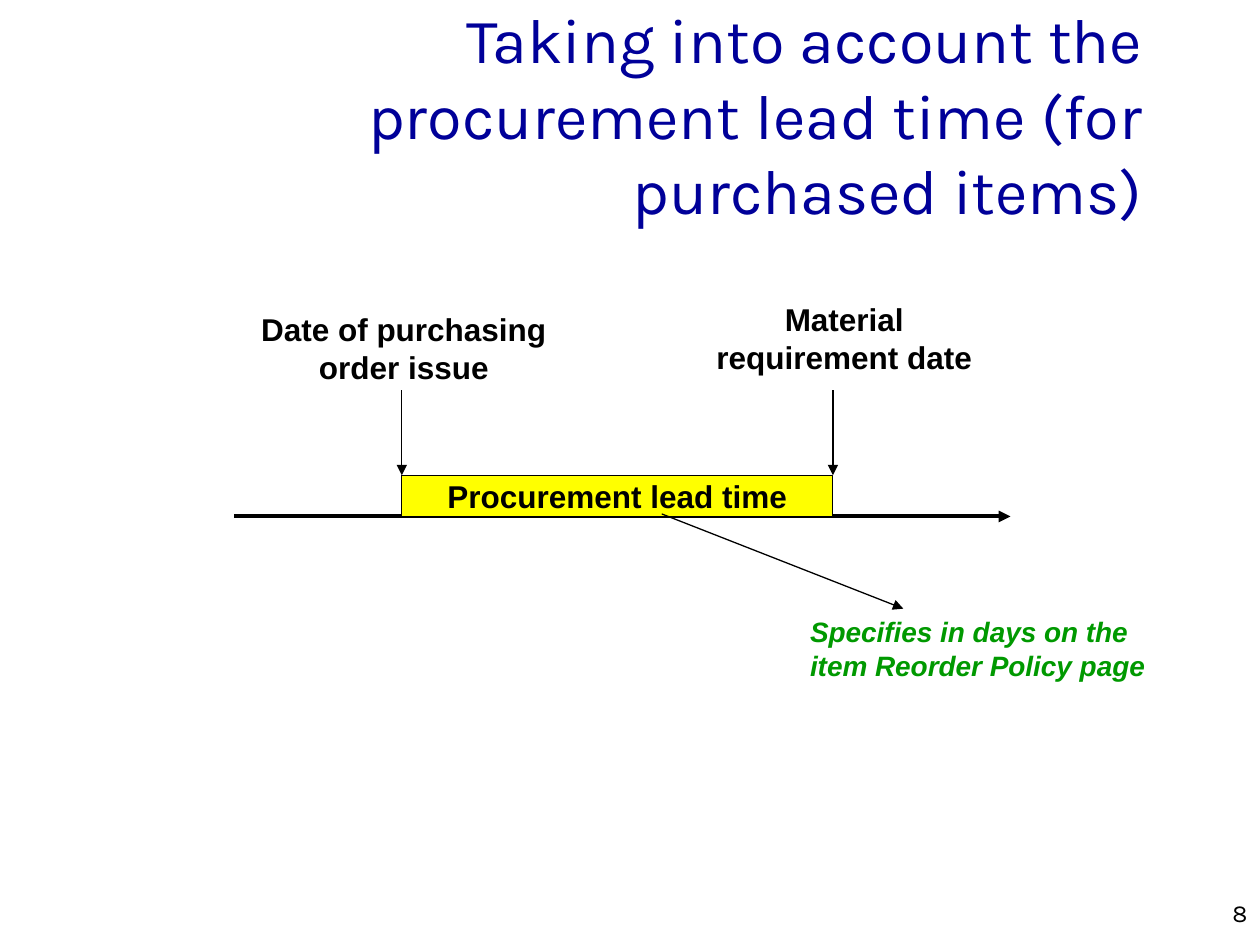
from dataclasses import dataclass

from lxml import etree
from pptx import Presentation
from pptx.dml.color import RGBColor
from pptx.enum import shapes, text
from pptx.oxml.ns import qn
from pptx.util import Cm, Pt


@dataclass(frozen=True)
class TextStyle:
    font: str
    size: float
    color: str
    bold: bool = False
    italic: bool = False


@dataclass(frozen=True)
class Theme:
    ink: str = "000000"
    bar: str = "FFFF00"
    thin: float = 0.75
    thick: float = 2.25
    title: TextStyle = TextStyle("Karla", 36, "000099")
    number: TextStyle = TextStyle("Karla", 14, "000000")
    label: TextStyle = TextStyle("Arial", 18, "000000", bold=True)
    note: TextStyle = TextStyle("Arial", 16, "009900", bold=True, italic=True)


@dataclass(frozen=True)
class Area:
    left: float
    top: float
    width: float
    height: float

    def place(self, box) -> None:
        box.left, box.top = Cm(self.left), Cm(self.top)
        box.width, box.height = Cm(self.width), Cm(self.height)


@dataclass(frozen=True)
class Label:
    wording: str
    area: Area
    style: TextStyle
    align: text.PP_ALIGN
    anchor: text.MSO_ANCHOR = text.MSO_ANCHOR.TOP
    grow: bool = True


@dataclass(frozen=True)
class Arrow:
    start: tuple[float, float]
    end: tuple[float, float]
    weight: float


THEME = Theme()
LEFT, CENTER, RIGHT = text.PP_ALIGN.LEFT, text.PP_ALIGN.CENTER, text.PP_ALIGN.RIGHT
MIDDLE = text.MSO_ANCHOR.MIDDLE

ISSUE_X, REQUIRED_X = 8.1, 16.79
MARKER_Y, BAR_Y, AXIS_Y = 7.87, 9.58, 10.41

TITLE = Label("Taking into account the procurement lead time (for purchased items)",
              Area(1.7, 0.71, 21.59, 3.18), THEME.title, RIGHT, MIDDLE, grow=False)
BAR = Label("Procurement lead time",
            Area(ISSUE_X, BAR_Y, REQUIRED_X - ISSUE_X, AXIS_Y - BAR_Y),
            THEME.label, CENTER, MIDDLE, grow=False)
LABELS = [
    Label("8", Area(20.12, 17.98, 5.28, 0.64), THEME.number, RIGHT, grow=False),
    Label("Material requirement date", Area(14.1, 5.92, 5.84, 1.78),
          THEME.label, CENTER, MIDDLE),
    Label("Date of purchasing order issue", Area(4.9, 6.12, 6.48, 1.78),
          THEME.label, CENTER, MIDDLE),
    Label("Specifies in days on the item Reorder Policy page",
          Area(16.08, 12.27, 8.05, 1.63), THEME.note, LEFT),
]
AXIS = Arrow((4.72, AXIS_Y), (20.37, AXIS_Y), THEME.thick)
MARKERS = [Arrow((x, MARKER_Y), (x, BAR_Y), THEME.thin) for x in (ISSUE_X, REQUIRED_X)]
POINTER = Arrow((13.34, 10.36), (18.21, 12.27), THEME.thin)


def write_text(box, label: Label, wrap: bool = True) -> None:
    frame = box.text_frame
    frame.word_wrap = wrap
    frame.vertical_anchor = label.anchor
    frame.auto_size = (text.MSO_AUTO_SIZE.SHAPE_TO_FIT_TEXT if label.grow
                       else text.MSO_AUTO_SIZE.NONE)
    para = frame.paragraphs[0]
    para.alignment = label.align
    span = para.add_run()
    span.text = label.wording
    font, style = span.font, label.style
    font.name, font.size = style.font, Pt(style.size)
    font.bold, font.italic = style.bold, style.italic
    font.color.rgb = RGBColor.from_string(style.color)


def set_line(line, weight: float) -> None:
    line.width = Pt(weight)
    line.color.rgb = RGBColor.from_string(THEME.ink)


def draw_title(page, label: Label) -> None:
    box = page.shapes.title
    label.area.place(box)
    write_text(box, label)


def draw_label(page, label: Label) -> None:
    box = page.shapes.add_textbox(0, 0, 0, 0)
    write_text(box, label)
    label.area.place(box)


def draw_bar(page, label: Label) -> None:
    box = page.shapes.add_shape(shapes.MSO_SHAPE.RECTANGLE, 0, 0, 0, 0)
    label.area.place(box)
    box.shadow.inherit = False
    box.fill.solid()
    box.fill.fore_color.rgb = RGBColor.from_string(THEME.bar)
    set_line(box.line, THEME.thin)
    write_text(box, label, wrap=False)


def draw_arrow(page, arrow: Arrow) -> None:
    ends = [Cm(value) for value in (*arrow.start, *arrow.end)]
    connector = page.shapes.add_connector(shapes.MSO_CONNECTOR.STRAIGHT, *ends)
    set_line(connector.line, arrow.weight)
    properties = connector._element.spPr
    etree.SubElement(properties.find(qn("a:ln")), qn("a:tailEnd"), type="triangle")
    etree.SubElement(properties, qn("a:effectLst"))


def main() -> None:
    deck = Presentation()
    deck.slide_width, deck.slide_height = Cm(25.4), Cm(19.05)
    page = deck.slides.add_slide(deck.slide_layouts.get_by_name("Title Only"))
    draw_title(page, TITLE)
    for arrow in (AXIS, *MARKERS):
        draw_arrow(page, arrow)
    draw_bar(page, BAR)
    draw_arrow(page, POINTER)
    for label in LABELS:
        draw_label(page, label)
    deck.save("out.pptx")


if __name__ == "__main__":
    main()
